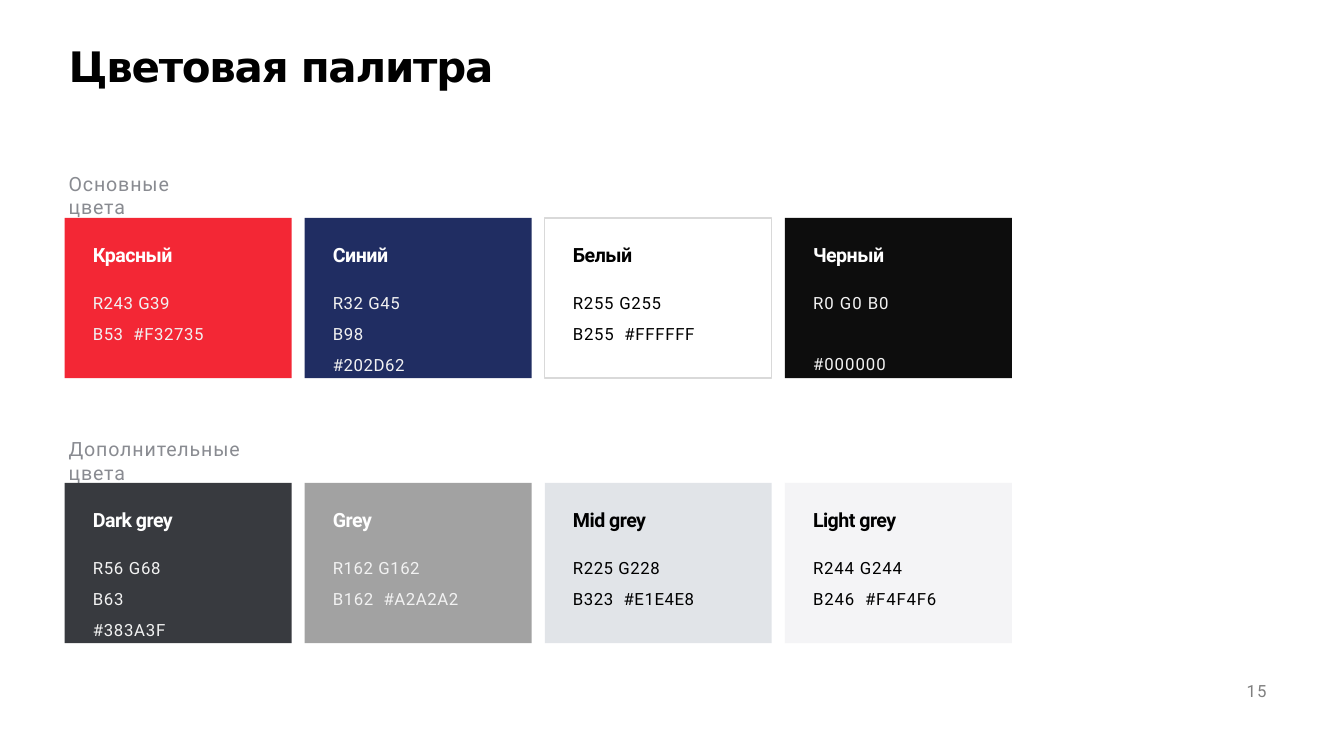
"""Build a colour palette slide with two rows of swatches."""
from dataclasses import dataclass

import pptx
import pptx.dml.color
import pptx.enum.shapes
import pptx.enum.text
import pptx.util

Cm = pptx.util.Cm
Pt = pptx.util.Pt


@dataclass(frozen=True)
class Theme:
    font: str = "Roboto"
    head_font: str = "DejaVu Sans"
    black: str = "000000"
    white: str = "FFFFFF"
    pale: str = "F2F2F2"
    label: str = "898B91"
    page: str = "7F7F7F"
    edge: str = "D9D9D9"
    red: str = "F32735"
    blue: str = "202D62"
    ink: str = "0D0D0D"
    dark: str = "383A3F"
    grey: str = "A2A2A2"
    mid: str = "E1E4E8"
    light: str = "F4F4F6"
    title_size: float = 30
    name_size: float = 14
    code_size: float = 12


THEME = Theme()
LEFT, TOP = 1.63, 5.49
STEP_X, STEP_Y = 6.05, 6.68
WIDTH, HEIGHT = 5.72, 4.04

ROWS = [
    ("Основные цвета", 4.01, [
        ("Красный", THEME.red, True, 0.4, ["R243 G39", "B53 #F32735"]),
        ("Синий", THEME.blue, True, 0.4, ["R32 G45", "B98", "#202D62"]),
        ("Белый", None, False, 0.5, ["R255 G255", "B255 #FFFFFF"]),
        ("Черный", THEME.ink, True, 0.7, ["R0 G0 B0", "#000000"]),
    ]),
    ("Дополнительные цвета", 5.72, [
        ("Dark grey", THEME.dark, True, 0.5, ["R56 G68", "B63", "#383A3F"]),
        ("Grey", THEME.grey, True, 0.4, ["R162 G162", "B162 #A2A2A2"]),
        ("Mid grey", THEME.mid, False, 0.4, ["R225 G228", "B323 #E1E4E8"]),
        ("Light grey", THEME.light, False, 0.6, ["R244 G244", "B246 #F4F4F6"]),
    ]),
]


def tint(code):
    return pptx.dml.color.RGBColor.from_string(code)


def write(par, text, size=14, color="000000", font="Roboto", bold=False, track=0):
    run = par.add_run()
    run.text = text
    run.font.size = Pt(size)
    run.font.name = font
    run.font.bold = bold
    run.font.color.rgb = tint(color)
    run._r.get_or_add_rPr().set("spc", str(round(track * 100)))


class Deck:
    def __init__(self, theme):
        self.theme = theme
        self.file = pptx.Presentation()
        self.file.slide_width = Cm(33.87)
        self.file.slide_height = Cm(19.05)
        self.slide = self.file.slides.add_slide(self.file.slide_layouts[6])

    def frame(self, shape, left, top, right=0):
        frame = shape.text_frame
        frame.word_wrap = True
        frame.vertical_anchor = pptx.enum.text.MSO_ANCHOR.TOP
        frame.margin_left, frame.margin_top = Cm(left), Cm(top)
        frame.margin_right, frame.margin_bottom = Cm(right), 0
        return frame

    def text(self, text, x, y, w, h, inset=0.03, right=0, **form):
        box = self.slide.shapes.add_textbox(Cm(x), Cm(y), Cm(w), Cm(h))
        frame = self.frame(box, inset, 0.06, right)
        write(frame.paragraphs[0], text, **form)

    def swatch(self, x, y, name, fill, deep, track, lines):
        theme = self.theme
        box = self.slide.shapes.add_shape(
            pptx.enum.shapes.MSO_SHAPE.RECTANGLE, Cm(x), Cm(y), Cm(WIDTH), Cm(HEIGHT))
        box.shadow.inherit = False
        if fill:
            box.fill.solid()
            box.fill.fore_color.rgb = tint(fill)
            box.line.fill.background()
        else:
            box.fill.background()
            box.line.color.rgb = tint(theme.edge)
            box.line.width = Pt(1)
        frame = self.frame(box, 0.71, 0.63)
        par = frame.paragraphs[0]
        par.alignment = pptx.enum.text.PP_ALIGN.LEFT
        write(par, name, theme.name_size, theme.white if deep else theme.black,
              theme.font, True, -0.4)
        for row, line in enumerate(lines):
            self.code(frame, line, deep, track, 11.6 if row == 0 else 0)
        if name == "Черный":
            frame.paragraphs[-1].space_before = Pt(21.6)

    def code(self, frame, line, deep, track, before):
        theme = self.theme
        par = frame.add_paragraph()
        par.alignment = pptx.enum.text.PP_ALIGN.LEFT
        par.line_spacing = 1.52
        par.space_before = Pt(before)
        form = {"size": theme.code_size, "font": theme.font,
                "color": theme.pale if deep else theme.black}
        head, gap, tail = line.partition(" #")
        write(par, head, track=track, **form)
        if gap:
            write(par, " ", track=track + 3.5, **form)
            write(par, "#" + tail, track=track, **form)


def main():
    deck = Deck(THEME)
    deck.text("Цветовая палитра", 1.7, 0.97, 14.17, 1.32, size=THEME.title_size,
              color=THEME.black, font=THEME.head_font, bold=True, track=-0.9)
    for row, (label, width, items) in enumerate(ROWS):
        y = TOP + row * STEP_Y
        deck.text(label, 1.7, y - 1.22, width, 0.66, right=0.5, size=THEME.name_size,
                  color=THEME.label, font=THEME.font, track=0.6)
        for col, item in enumerate(items):
            deck.swatch(LEFT + col * STEP_X, y, *item)
    deck.text("15", 31.32, 17.09, 0.89, 0.53, inset=0.1, size=THEME.code_size,
              color=THEME.page, font=THEME.font, track=0.8)
    deck.file.save("out.pptx")


if __name__ == "__main__":
    main()
